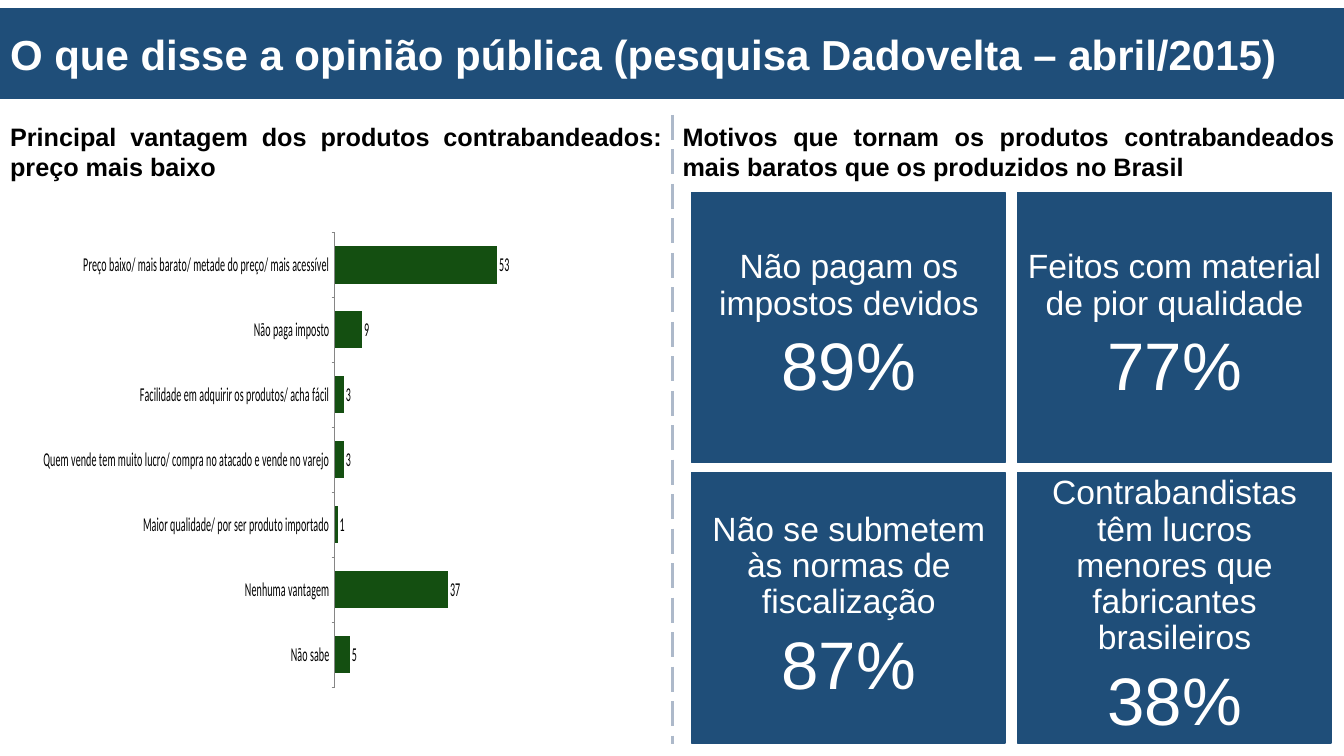
from dataclasses import dataclass

from lxml import etree
from pptx import Presentation
from pptx.chart.data import CategoryChartData
from pptx.dml.color import RGBColor
from pptx.enum.chart import XL_CHART_TYPE, XL_LABEL_POSITION, XL_TICK_MARK
from pptx.enum.dml import MSO_LINE
from pptx.enum.shapes import MSO_CONNECTOR, MSO_SHAPE
from pptx.enum.text import MSO_ANCHOR, MSO_AUTO_SIZE, PP_ALIGN
from pptx.oxml.ns import qn
from pptx.util import Inches, Pt

BAR = XL_CHART_TYPE.BAR_CLUSTERED
OUTSIDE_END = XL_LABEL_POSITION.OUTSIDE_END
TICK_OUT = XL_TICK_MARK.OUTSIDE
LONG_DASH = MSO_LINE.LONG_DASH
STRAIGHT = MSO_CONNECTOR.STRAIGHT
RECT = MSO_SHAPE.RECTANGLE
TOP, MIDDLE = MSO_ANCHOR.TOP, MSO_ANCHOR.MIDDLE
NO_FIT = MSO_AUTO_SIZE.NONE
LEFT, CENTER, JUSTIFY = PP_ALIGN.LEFT, PP_ALIGN.CENTER, PP_ALIGN.JUSTIFY

BLUE, GREEN, DIVIDER, GRAY = "1F4E79", "144F11", "ADB9CA", "868686"
WHITE, BLACK = "FFFFFF", "000000"
COLUMN_W = 6.67
CARD_LEFT, CARD_TOP, CARD_W, CARD_H = 6.86, 1.91, 3.11, 2.68
STEP_X, STEP_Y = 3.23, 2.78


@dataclass
class Heading:
    placeholder: int
    left: float
    text: str


@dataclass
class Card:
    column: int
    row: int
    reason: str
    share: str


@dataclass
class Answer:
    label: str
    percent: int


HEADINGS = [
    Heading(1, 0, "Principal vantagem dos produtos contrabandeados: preço mais baixo"),
    Heading(3, COLUMN_W, "Motivos que tornam os produtos contrabandeados "
                         "mais baratos que os produzidos no Brasil"),
]
CARDS = [
    Card(0, 0, "Não pagam os impostos devidos", "89%"),
    Card(0, 1, "Não se submetem às normas de fiscalização", "87%"),
    Card(1, 0, "Feitos com material de pior qualidade", "77%"),
    Card(1, 1, "Contrabandistas têm lucros menores que fabricantes brasileiros", "38%"),
]
ANSWERS = [
    Answer("Preço baixo/ mais barato/ metade do preço/ mais acessível", 53),
    Answer("Não paga imposto", 9),
    Answer("Facilidade em adquirir os produtos/ acha fácil", 3),
    Answer("Quem vende tem muito lucro/ compra no atacado e vende no varejo", 3),
    Answer("Maior qualidade/ por ser produto importado", 1),
    Answer("Nenhuma vantagem", 37),
    Answer("Não sabe", 5),
]


def color(value: str) -> RGBColor:
    return RGBColor.from_string(value)


def place(sp, left: float, top: float, width: float, height: float) -> None:
    sp.left, sp.top = Inches(left), Inches(top)
    sp.width, sp.height = Inches(width), Inches(height)


def paint(sp, fill: str) -> None:
    sp.fill.solid()
    sp.fill.fore_color.rgb = color(fill)
    sp.line.color.rgb = color(fill)
    sp.line.width = Pt(1)


def frame(sp, anchor: MSO_ANCHOR):
    tf = sp.text_frame
    tf.word_wrap = True
    tf.auto_size = NO_FIT
    tf.vertical_anchor = anchor
    return tf


def write(p, text: str, size: float, fill: str, align: PP_ALIGN, bold: bool = False) -> None:
    p.alignment = align
    p.space_before = Pt(0)
    r = p.add_run()
    r.text = text
    r.font.name, r.font.size, r.font.bold = "Arial", Pt(size), bold
    r.font.color.rgb = color(fill)


def add_card(slide, card: Card) -> None:
    sp = slide.shapes.add_shape(RECT, 0, 0, 0, 0)
    place(sp, CARD_LEFT + card.column * STEP_X, CARD_TOP + card.row * STEP_Y, CARD_W, CARD_H)
    sp.shadow.inherit = False
    paint(sp, BLUE)
    tf = frame(sp, MIDDLE)
    tf.margin_left, tf.margin_right = Inches(0.1), Inches(0.09)
    for p, text, size in ((tf.paragraphs[0], card.reason, 24), (tf.add_paragraph(), card.share, 48)):
        write(p, text, size, WHITE, CENTER)
        p.line_spacing, p.space_after = 0.9, Pt(7.4)


def set_plot_area(chart, x: float, y: float, w: float, h: float) -> None:
    plot_area = chart.plots[0]._element.getparent()
    for old in plot_area.findall(qn("c:layout")):
        plot_area.remove(old)
    layout = etree.Element(qn("c:layout"))
    plot_area.insert(0, layout)
    manual = etree.SubElement(layout, qn("c:manualLayout"))
    settings = [("layoutTarget", "inner"), ("xMode", "edge"), ("yMode", "edge"),
                ("x", x), ("y", y), ("w", w), ("h", h)]
    for tag, value in settings:
        etree.SubElement(manual, qn(f"c:{tag}")).set("val", str(value))


def add_answers_chart(slide, answers: list[Answer]) -> None:
    data = CategoryChartData(number_format="0")
    data.categories = [a.label for a in answers]
    data.add_series("Series 1", [a.percent for a in answers])
    sp = slide.shapes.add_chart(BAR, Inches(0.43), Inches(2.12), Inches(5.93), Inches(4.7), data)
    chart = sp.chart
    chart.has_legend = chart.has_title = False
    chart.font.name, chart.font.size = "Calibri", Pt(14)
    chart.font.color.rgb = color(BLACK)

    axis = chart.category_axis
    axis.reverse_order = True
    axis.major_tick_mark = TICK_OUT
    axis.format.line.color.rgb = color(GRAY)
    axis.format.line.width = Pt(0.75)
    scale = chart.value_axis
    scale.minimum_scale, scale.maximum_scale = 0, 100
    scale.has_major_gridlines = scale.visible = False

    plot = chart.plots[0]
    plot.gap_width, plot.vary_by_categories = 75, False
    fill = plot.series[0].format.fill
    fill.solid()
    fill.fore_color.rgb = color(GREEN)
    plot.has_data_labels = True
    labels = plot.data_labels
    labels.show_value, labels.position = True, OUTSIDE_END
    labels.number_format, labels.number_format_is_linked = "0", False
    set_plot_area(chart, 0, 0.04, 1, 0.96)


def add_divider(slide) -> None:
    x = Inches(COLUMN_W)
    line = slide.shapes.add_connector(STRAIGHT, x, Inches(1.14), x, Inches(7.38))
    line.line.color.rgb = color(DIVIDER)
    line.line.width = Pt(2.25)
    line.line.dash_style = LONG_DASH
    etree.SubElement(line._element.spPr, qn("a:effectLst"))


def main() -> None:
    prs = Presentation()
    prs.slide_width, prs.slide_height = Inches(13.33), Inches(7.5)
    slide = prs.slides.add_slide(prs.slide_layouts[4])

    # Title band
    title = slide.shapes.title
    place(title, 0, 0.09, 13.33, 0.89)
    paint(title, BLUE)
    write(frame(title, MIDDLE).paragraphs[0],
          "O que disse a opinião pública (pesquisa Dadovelta – abril/2015)", 30, WHITE, LEFT, True)

    # Column headings
    for heading in HEADINGS:
        sp = slide.placeholders[heading.placeholder]
        place(sp, heading.left, 1.15, COLUMN_W, 0.71)
        write(frame(sp, TOP).paragraphs[0], heading.text, 18, BLACK, JUSTIFY, True)

    # Unused placeholders
    for sp in list(slide.placeholders):
        if not sp.has_text_frame or not sp.text_frame.text:
            sp._element.getparent().remove(sp._element)

    # Chart, reason cards and divider
    add_answers_chart(slide, ANSWERS)
    for card in CARDS:
        add_card(slide, card)
    add_divider(slide)

    prs.save("out.pptx")


if __name__ == "__main__":
    main()
